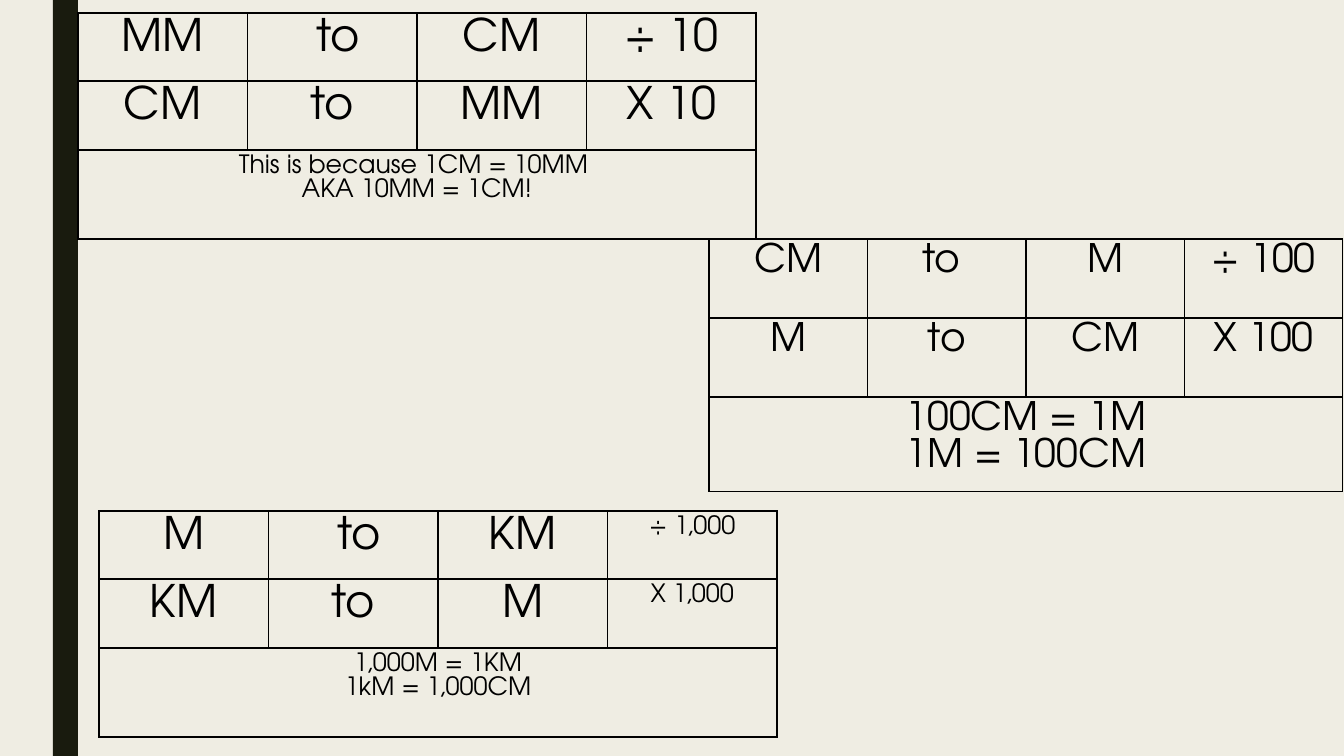
from dataclasses import dataclass

import pptx
import pptx.dml.color
import pptx.enum.shapes
import pptx.enum.text
import pptx.oxml
import pptx.oxml.ns
import pptx.presentation
import pptx.slide
import pptx.table
import pptx.util

EMU_PER_PX = 914400 / 100.8
SLIDE_WIDTH, SLIDE_HEIGHT = 1344, 756


@dataclass(frozen=True)
class Theme:
    background: str = "EFEDE3"
    bar: str = "191B0E"
    ink: str = "000000"
    font: str = "TeX Gyre Adventor"
    large: int = 32
    medium: int = 28
    small: int = 18
    border: int = 1


THEME = Theme()


@dataclass(frozen=True)
class ConversionTable:
    left: int
    top: int
    width: int
    row_heights: tuple[int, ...]
    rows: tuple[tuple[str, ...], ...]
    note: str
    unit_size: int
    factor_size: int
    note_size: int


CONVERSIONS = (
    ConversionTable(
        78, 13, 678, (68, 69, 89),
        (("MM", " to", "CM", "÷ 10"), ("CM", "to", "MM", "X 10")),
        "This is because 1CM = 10MM \nAKA 10MM = 1CM!",
        THEME.large, THEME.large, THEME.small,
    ),
    ConversionTable(
        709, 239, 634, (79, 79, 95),
        (("CM", "to ", "M", "÷ 100"), ("M", "to", "CM", "X 100")),
        "100CM = 1M\n1M = 100CM",
        THEME.medium, THEME.medium, THEME.medium,
    ),
    ConversionTable(
        99, 511, 678, (68, 69, 89),
        (("M", " to", "KM", "÷ 1,000"), ("KM", "to", "M", "X 1,000")),
        "1,000M = 1KM\n1kM = 1,000CM",
        THEME.large, THEME.small, THEME.small,
    ),
)


def px(length: float) -> pptx.util.Emu:
    return pptx.util.Emu(round(length * EMU_PER_PX))


def color(value: str) -> pptx.dml.color.RGBColor:
    return pptx.dml.color.RGBColor.from_string(value)


def add_borders(cell: pptx.table._Cell) -> None:
    properties = cell._tc.get_or_add_tcPr()
    namespace = pptx.oxml.ns.nsdecls("a")
    width = pptx.util.Pt(THEME.border)
    # Border lines must come before the cell fill
    for position, side in enumerate(("lnL", "lnR", "lnT", "lnB")):
        line = pptx.oxml.parse_xml(
            f'<a:{side} {namespace} w="{width}"><a:solidFill>'
            f'<a:srgbClr val="{THEME.ink}"/></a:solidFill></a:{side}>'
        )
        properties.insert(position, line)


def write_cell(cell: pptx.table._Cell, text: str, size: int) -> None:
    cell.text_frame.text = text
    for paragraph in cell.text_frame.paragraphs:
        paragraph.alignment = pptx.enum.text.PP_ALIGN.CENTER
        for run in paragraph.runs:
            run.font.name = THEME.font
            run.font.size = pptx.util.Pt(size)
            run.font.bold = False
            run.font.color.rgb = color(THEME.ink)


def add_conversion(slide: pptx.slide.Slide, conversion: ConversionTable) -> None:
    row_count, column_count = len(conversion.row_heights), len(conversion.rows[0])
    table = slide.shapes.add_table(
        row_count, column_count, px(conversion.left), px(conversion.top),
        px(conversion.width), px(sum(conversion.row_heights)),
    ).table
    table.first_row = False
    table.horz_banding = False
    for column in table.columns:
        column.width = px(conversion.width / column_count)
    for row, height in zip(table.rows, conversion.row_heights):
        row.height = px(height)
    for cell in table.iter_cells():
        cell.fill.background()
        add_borders(cell)

    # Conversion rows, with the factor in the last column
    for row_index, texts in enumerate(conversion.rows):
        for column_index, text in enumerate(texts):
            is_factor = column_index == column_count - 1
            size = conversion.factor_size if is_factor else conversion.unit_size
            write_cell(table.cell(row_index, column_index), text, size)

    # Explanation across the full width
    note_cell = table.cell(row_count - 1, 0)
    note_cell.merge(table.cell(row_count - 1, column_count - 1))
    write_cell(note_cell, conversion.note, conversion.note_size)


def add_side_bar(slide: pptx.slide.Slide) -> None:
    bar = slide.shapes.add_shape(
        pptx.enum.shapes.MSO_SHAPE.RECTANGLE, px(53), 0, px(25), px(SLIDE_HEIGHT)
    )
    bar.shadow.inherit = False
    bar.fill.solid()
    bar.fill.fore_color.rgb = color(THEME.bar)
    bar.line.fill.background()


def main() -> None:
    presentation = pptx.Presentation()
    presentation.slide_width = px(SLIDE_WIDTH)
    presentation.slide_height = px(SLIDE_HEIGHT)
    slide = presentation.slides.add_slide(presentation.slide_layouts[6])
    slide.background.fill.solid()
    slide.background.fill.fore_color.rgb = color(THEME.background)
    add_side_bar(slide)
    for conversion in CONVERSIONS:
        add_conversion(slide, conversion)
    presentation.save("out.pptx")


if __name__ == "__main__":
    main()
